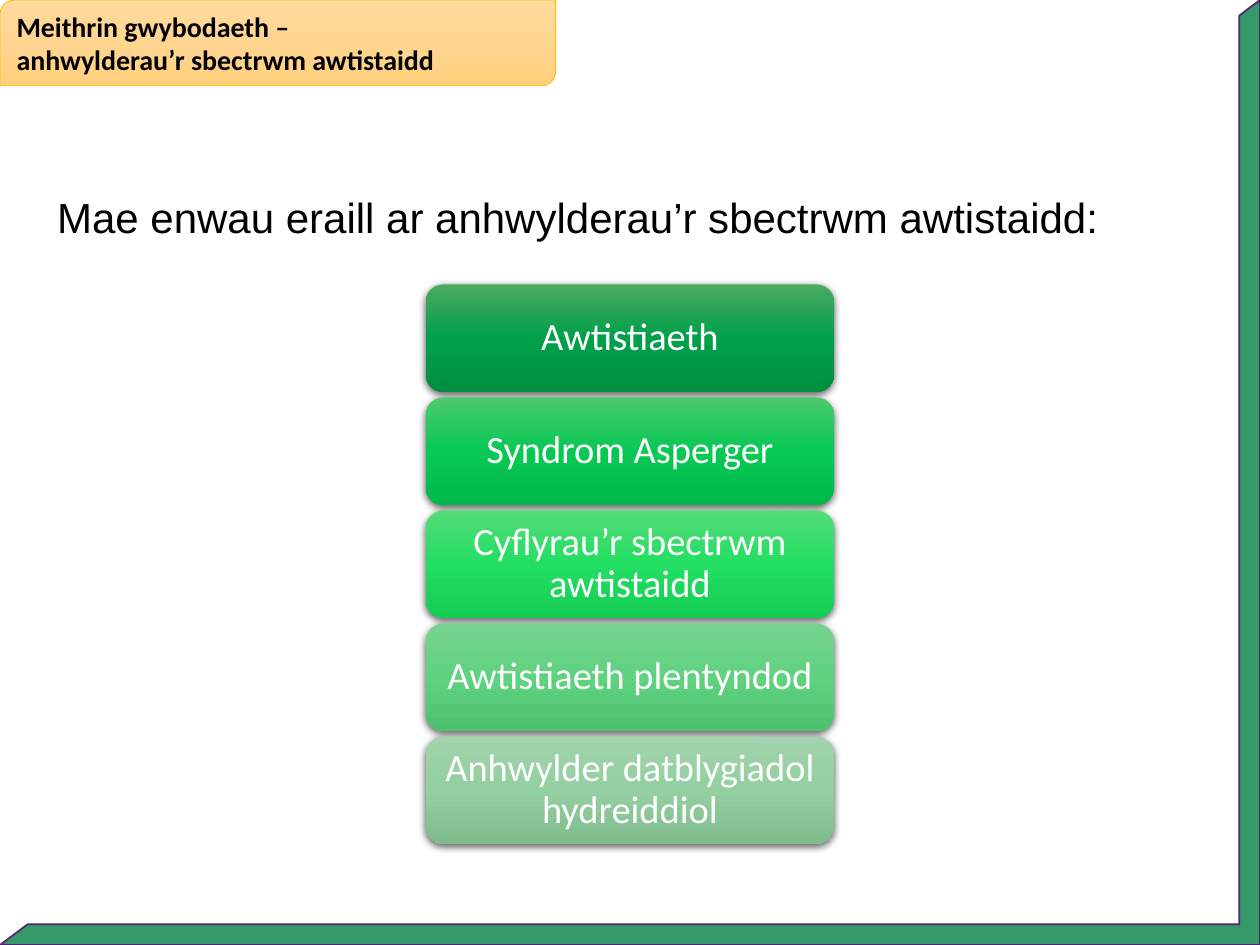
from copy import deepcopy

from lxml.etree import SubElement as Sub
from pptx import Presentation
from pptx.dml.color import RGBColor as Rgb
from pptx.enum.shapes import MSO_SHAPE as Shape
from pptx.enum.text import MSO_ANCHOR as Anchor, MSO_AUTO_SIZE as Auto, PP_ALIGN as Align
from pptx.oxml.ns import qn
from pptx.util import Pt

WIDE, HIGH = 720, 540
BLACK = Rgb(0x00, 0x00, 0x00)
WHITE = Rgb(0xFF, 0xFF, 0xFF)
GREEN = Rgb(0x33, 0x99, 0x66)
PURPLE = Rgb(0x53, 0x24, 0x76)
GOLD = Rgb(0xFF, 0xC0, 0x00)
PEACH = [Rgb(0xFF, 0xDB, 0x9E), Rgb(0xFF, 0xD5, 0x90), Rgb(0xFF, 0xD0, 0x7C)]
NAMES = [
    ("Awtistiaeth",
     [Rgb(0x4B, 0xAA, 0x63), Rgb(0x00, 0xA0, 0x49), Rgb(0x00, 0x8E, 0x41)]),
    ("Syndrom Asperger",
     [Rgb(0x4C, 0xCA, 0x6C), Rgb(0x08, 0xC8, 0x54), Rgb(0x00, 0xB9, 0x49)]),
    ("Cyflyrau’r sbectrwm awtistaidd",
     [Rgb(0x54, 0xDC, 0x78), Rgb(0x22, 0xDE, 0x62), Rgb(0x16, 0xCE, 0x54)]),
    ("Awtistiaeth plentyndod",
     [Rgb(0x78, 0xD3, 0x90), Rgb(0x5F, 0xD2, 0x7F), Rgb(0x4E, 0xC1, 0x6E)]),
    ("Anhwylder datblygiadol hydreiddiol",
     [Rgb(0xA2, 0xD3, 0xAC), Rgb(0x93, 0xCF, 0xA0), Rgb(0x7F, 0xBB, 0x8C)]),
]
# Stack of name boxes
BOX_W, BOX_H, TOP, STEP = 233.3, 61.5, 162.5, 64.6


def put(obj, form):
    for key, val in form.items():
        setattr(obj, key, val)


def add_form(slide, kind, box, line=None, width=0):
    form = slide.shapes.add_shape(kind, *map(Pt, box))
    form.shadow.inherit = False
    if line is None:
        form.line.fill.background()
    else:
        form.line.color.rgb = line
        form.line.width = Pt(width)
    return form


def shade(form, tints):
    """Fill from top to bottom with evenly spaced tints."""
    form.fill.gradient()
    form.fill.gradient_angle = 270
    stops = form.fill._fill._gradFill.gsLst
    while len(stops) < len(tints):
        stops.append(deepcopy(stops[0]))
    for i, (stop, tint) in enumerate(zip(form.fill.gradient_stops, tints)):
        stop.color.rgb = tint
        stop.position = i / (len(tints) - 1)


def drop(form):
    """Cast a soft shadow straight down."""
    glow = form._element.spPr.find(qn("a:effectLst"))
    cast = Sub(glow, qn("a:outerShdw"), blurRad=str(Pt(4.5)), dist=str(Pt(1.5)),
               dir="5400000", rotWithShape="0")
    tint = Sub(cast, qn("a:srgbClr"), val="000000")
    Sub(tint, qn("a:alpha"), val="63000")


def write(form, lines, font, frame, para):
    text = form.text_frame
    put(text, frame)
    text.text = "\n".join(lines)
    for item in text.paragraphs:
        put(item, para)
        run = item.runs[0].font
        put(run, {key: val for key, val in font.items() if key != "color"})
        run.color.rgb = font["color"]


def add_edge(slide):
    edge = add_form(slide, Shape.HALF_FRAME, (0, 0, WIDE, HIGH), PURPLE, 1)
    edge.rotation = 180
    edge.adjustments[0] = edge.adjustments[1] = 0.022
    edge.fill.solid()
    edge.fill.fore_color.rgb = GREEN


def add_name(slide, top, name, tints):
    box = add_form(slide, Shape.ROUNDED_RECTANGLE,
                   ((WIDE - BOX_W) / 2, top, BOX_W, BOX_H))
    shade(box, tints)
    drop(box)
    # Rounded corners already push the text inwards, so side margins stay small
    write(box, [name], {"name": "Calibri", "size": Pt(22), "color": WHITE},
          {"word_wrap": True, "vertical_anchor": Anchor.MIDDLE,
           "margin_left": Pt(5), "margin_right": Pt(5)},
          {"alignment": Align.CENTER, "line_spacing": 0.9})


def add_lead(slide):
    lead = slide.shapes.add_textbox(Pt(25.5), Pt(106), Pt(616), Pt(36))
    write(lead, ["Mae enwau eraill ar anhwylderau’r sbectrwm awtistaidd:"],
          {"name": "Arial", "size": Pt(24), "color": BLACK},
          {"word_wrap": False, "auto_size": Auto.SHAPE_TO_FIT_TEXT},
          {"alignment": Align.LEFT})


def add_tab(slide):
    tab = add_form(slide, Shape.ROUND_2_DIAG_RECTANGLE, (0, 0, 317.5, 49), GOLD, 0.5)
    tab.adjustments[0], tab.adjustments[1] = 0.167, 0
    shade(tab, PEACH)
    write(tab, ["Meithrin gwybodaeth –", "anhwylderau’r sbectrwm awtistaidd"],
          {"name": "Calibri", "size": Pt(16), "bold": True, "color": BLACK},
          {"word_wrap": True, "vertical_anchor": Anchor.MIDDLE},
          {"alignment": Align.LEFT})


def main():
    deck = Presentation()
    put(deck, {"slide_width": Pt(WIDE), "slide_height": Pt(HIGH)})
    slide = deck.slides.add_slide(deck.slide_layouts[6])
    add_edge(slide)
    for i, (name, tints) in enumerate(NAMES):
        add_name(slide, TOP + i * STEP, name, tints)
    add_lead(slide)
    add_tab(slide)
    deck.save("out.pptx")


if __name__ == "__main__":
    main()
